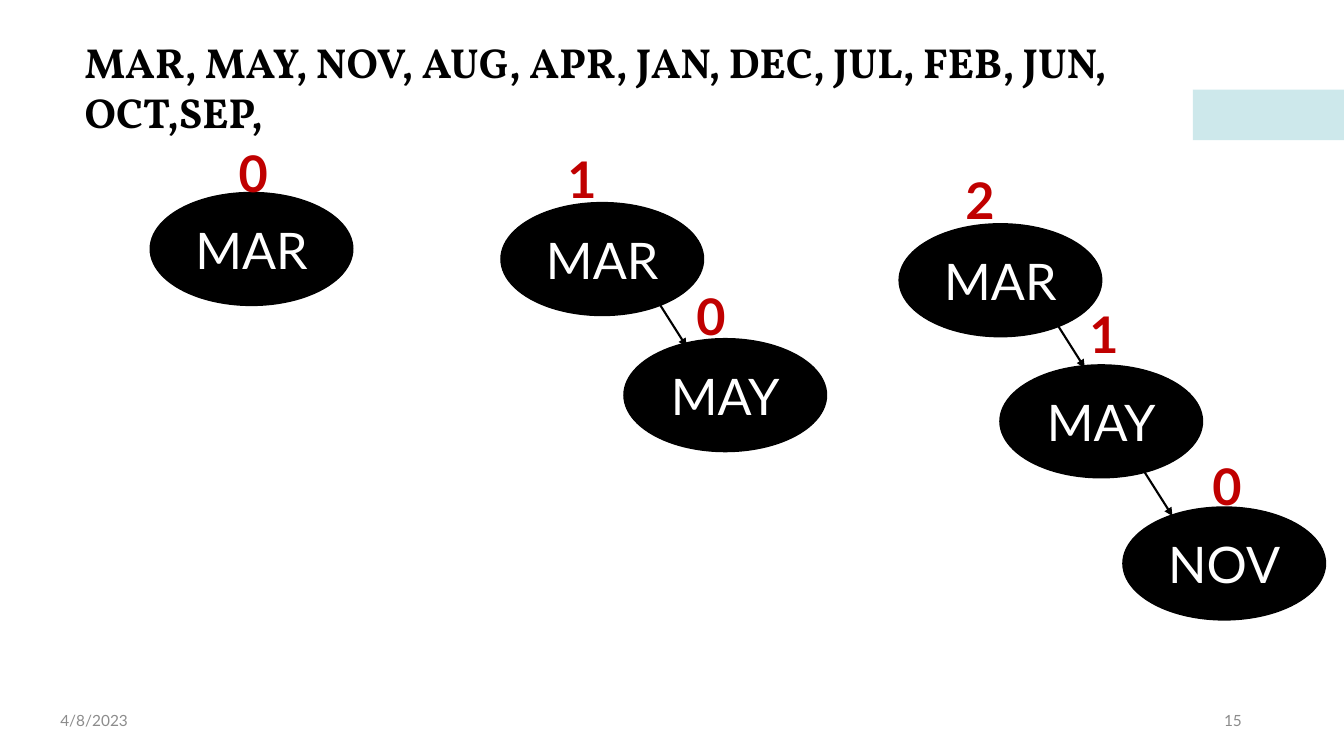
from dataclasses import dataclass

import pptx
import pptx.dml.color
import pptx.enum.shapes
import pptx.enum.text
import pptx.oxml.ns
import pptx.util
from lxml import etree

RGBColor = pptx.dml.color.RGBColor
PP_ALIGN = pptx.enum.text.PP_ALIGN
MSO_ANCHOR = pptx.enum.text.MSO_ANCHOR
MSO_SHAPE = pptx.enum.shapes.MSO_SHAPE
qn = pptx.oxml.ns.qn

BLACK = RGBColor(0x00, 0x00, 0x00)
WHITE = RGBColor(0xFF, 0xFF, 0xFF)
RED = RGBColor(0xC0, 0x00, 0x00)
GREY = RGBColor(0x8C, 0x8C, 0x8C)
TEAL = RGBColor(0x9C, 0xD3, 0xD9)

COLS, ROWS = 160, 90
NODE_W, NODE_H = 24.12, 13.44
BADGE_W, BADGE_H = 5.28, 8.52
ARROW_DX, ARROW_DY = 3.5, 5.52

prs = pptx.Presentation()
prs.slide_width = pptx.util.Inches(13.333)
prs.slide_height = pptx.util.Inches(7.5)


@dataclass(frozen=True)
class Node:
    label: str
    col: float
    row: float
    height: str
    badge_col: float
    badge_row: float


@dataclass(frozen=True)
class Arrow:
    col: float
    row: float


@dataclass(frozen=True)
class Footer:
    text: str
    col: float
    align: PP_ALIGN


NODES = [
    Node("MAR", 17.88, 22.92, "0", 27.24, 16.32),
    Node("MAR", 59.64, 24.12, "1", 66.36, 17.04),
    Node("MAY", 74.28, 40.32, "0", 81.72, 33.36),
    Node("MAR", 107.04, 26.64, "2", 113.76, 19.56),
    Node("MAY", 119.04, 43.44, "1", 128.52, 35.52),
    Node("NOV", 133.68, 60.36, "0", 143.16, 53.64),
]
ARROWS = [Arrow(78.24, 35.76), Arrow(125.64, 38.28), Arrow(136.08, 55.92)]
FOOTERS = [
    Footer("4/8/2023", 6, PP_ALIGN.LEFT),
    Footer("15", 113.04, PP_ALIGN.RIGHT),
]


def x(cols: float) -> int:
    return round(prs.slide_width * cols / COLS)


def y(rows: float) -> int:
    return round(prs.slide_height * rows / ROWS)


def box(col: float, row: float, width: float, height: float) -> tuple[int, int, int, int]:
    return x(col), y(row), x(width), y(height)


def write(sp, text: str, size: float, color: RGBColor, align: PP_ALIGN,
          anchor: MSO_ANCHOR, bold: bool = False, font: str = "Lato",
          wrap: bool = True) -> None:
    tf = sp.text_frame
    tf.text = text
    tf.word_wrap = wrap
    tf.auto_size = pptx.enum.text.MSO_AUTO_SIZE.NONE
    tf.vertical_anchor = anchor
    p = tf.paragraphs[0]
    p.alignment = align
    r = p.runs[0]
    r.font.name = font
    r.font.size = pptx.util.Pt(size)
    r.font.bold = bold
    r.font.color.rgb = color


def add_bar(s) -> None:
    sp = s.shapes.add_shape(MSO_SHAPE.RECTANGLE, *box(142, 10.68, 18, 6))
    sp.shadow.inherit = False
    sp.fill.solid()
    sp.fill.fore_color.rgb = TEAL
    sp.line.fill.background()
    color = sp._element.spPr.find(qn("a:solidFill")).find(qn("a:srgbClr"))
    etree.SubElement(color, qn("a:alpha"), val="50000")


def add_title(s) -> None:
    sp = s.shapes.title
    sp.left, sp.top, sp.width, sp.height = box(8.88, 3.72, 130.8, 13.32)
    write(sp, "MAR, MAY, NOV, AUG, APR, JAN, DEC, JUL, FEB, JUN, OCT,SEP,",
          30, BLACK, PP_ALIGN.LEFT, MSO_ANCHOR.TOP, True, "Vollkorn")


def add_footer(s, footer: Footer) -> None:
    sp = s.shapes.add_textbox(*box(footer.col, 83.4, 36, 4.8))
    write(sp, footer.text, 11, GREY, footer.align, MSO_ANCHOR.MIDDLE)


def add_node(s, node: Node) -> None:
    sp = s.shapes.add_shape(MSO_SHAPE.OVAL, *box(node.col, node.row, NODE_W, NODE_H))
    sp.shadow.inherit = False
    sp.fill.solid()
    sp.fill.fore_color.rgb = BLACK
    sp.line.color.rgb = BLACK
    sp.line.width = pptx.util.Pt(1)
    write(sp, node.label, 36, WHITE, PP_ALIGN.CENTER, MSO_ANCHOR.MIDDLE)


def add_badge(s, node: Node) -> None:
    sp = s.shapes.add_textbox(*box(node.badge_col, node.badge_row, BADGE_W, BADGE_H))
    write(sp, node.height, 36, RED, PP_ALIGN.LEFT, MSO_ANCHOR.TOP, True, wrap=False)


def add_arrow(s, arrow: Arrow) -> None:
    sp = s.shapes.add_connector(
        pptx.enum.shapes.MSO_CONNECTOR.STRAIGHT, x(arrow.col), y(arrow.row),
        x(arrow.col + ARROW_DX), y(arrow.row + ARROW_DY))
    sp.line.color.rgb = BLACK
    sp.line.width = pptx.util.Pt(1.5)
    etree.SubElement(sp.line._get_or_add_ln(), qn("a:tailEnd"), type="triangle")
    etree.SubElement(sp._element.spPr, qn("a:effectLst"))


def main() -> None:
    s = prs.slides.add_slide(prs.slide_layouts[5])
    add_bar(s)
    add_title(s)
    for footer in FOOTERS:
        add_footer(s, footer)
    for node in NODES:
        add_node(s, node)
    for arrow in ARROWS:
        add_arrow(s, arrow)
    for node in NODES:
        add_badge(s, node)
    prs.save("out.pptx")


if __name__ == "__main__":
    main()
